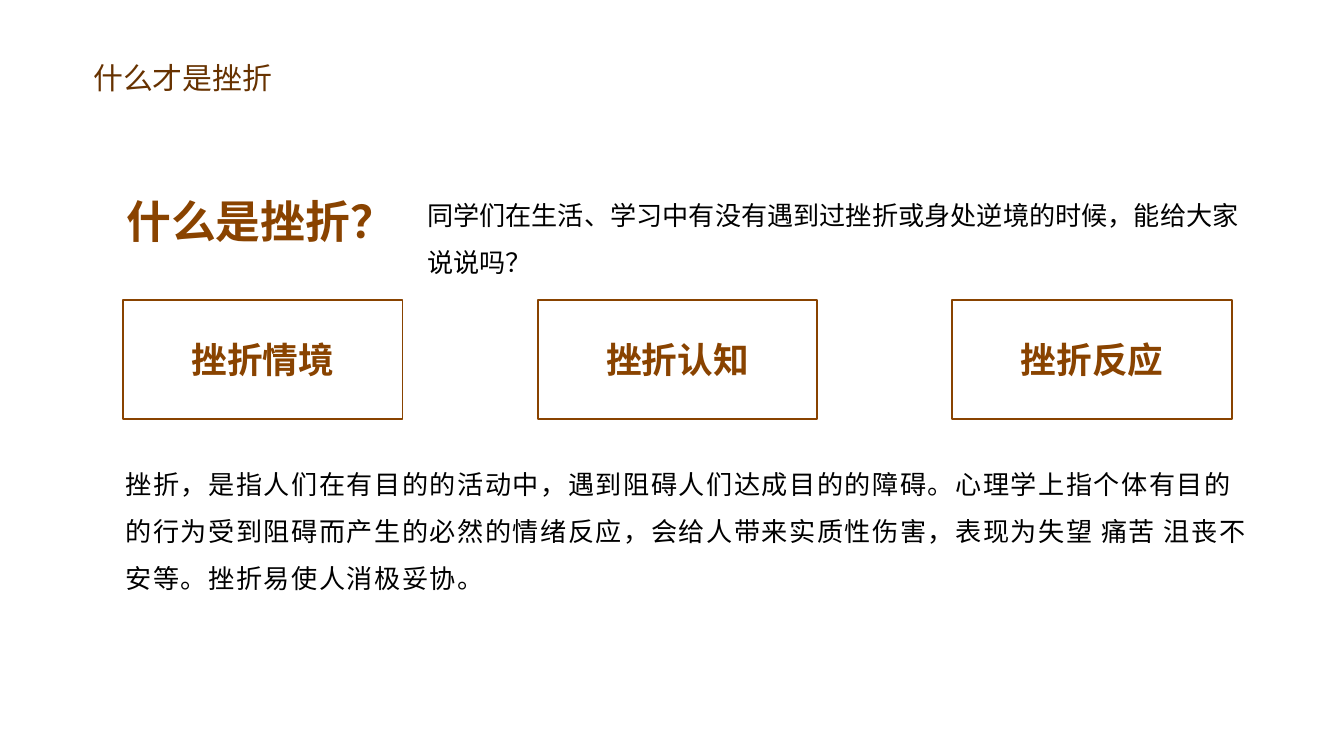
from dataclasses import dataclass

from pptx import Presentation
from pptx.dml.color import RGBColor
from pptx.enum.shapes import MSO_SHAPE as Kind
from pptx.enum.text import MSO_ANCHOR as Anchor, MSO_AUTO_SIZE as Fit, PP_ALIGN as Align
from pptx.oxml.ns import qn
from pptx.oxml.xmlchemy import OxmlElement
from pptx.util import Pt

PX = 4572  # 200 px to the inch
FONT = "Noto Sans CJK SC"
DARK = RGBColor(0x67, 0x32, 0x00)
BROWN = RGBColor(0x89, 0x43, 0x00)
BLACK = RGBColor(0x00, 0x00, 0x00)


@dataclass(frozen=True)
class Box:
    left: int
    top: int
    width: int
    height: int

    def emu(self) -> tuple[int, ...]:
        return tuple(n * PX for n in (self.left, self.top, self.width, self.height))


def write(shape, text: str, *, size: float, color: RGBColor, bold: bool = False,
          align=Align.LEFT, anchor=Anchor.TOP, wrap: bool = True,
          fit=Fit.SHAPE_TO_FIT_TEXT, lead: float = 1.0, gap: int = 0) -> None:
    """Fill a shape with one paragraph; gap is letter spacing in 1/100 pt."""
    frame = shape.text_frame
    frame.word_wrap, frame.auto_size = wrap, fit
    frame.vertical_anchor = anchor
    para = frame.paragraphs[0]
    para.alignment, para.line_spacing = align, lead
    run = para.add_run()
    run.text = text
    font = run.font
    font.name, font.size, font.bold = FONT, Pt(size), bold
    font.color.rgb = color
    props = font._element
    east = OxmlElement("a:ea")
    east.set("typeface", FONT)
    props.find(qn("a:latin")).addnext(east)
    if gap:
        props.set("spc", str(gap))


def label(slide, box: Box, text: str, **style) -> None:
    write(slide.shapes.add_textbox(*box.emu()), text, **style)


def card(slide, box: Box, text: str) -> None:
    shape = slide.shapes.add_shape(Kind.RECTANGLE, *box.emu())
    shape.shadow.inherit = False
    shape.fill.background()
    shape.line.color.rgb = BROWN
    shape.line.width = Pt(1)
    write(shape, text, size=19.1, color=BROWN, bold=True, align=Align.CENTER,
          anchor=Anchor.MIDDLE, fit=Fit.NONE)


def main() -> None:
    deck = Presentation()
    deck.slide_width, deck.slide_height = 2000 * PX, 1125 * PX
    slide = deck.slides.add_slide(deck.slide_layouts[5])

    # Title
    title = slide.shapes.title
    title.left, title.top, title.width, title.height = Box(119, 79, 310, 74).emu()
    write(title, "什么才是挫折", size=16, color=DARK, wrap=False)

    # Question and prompt
    body = dict(size=14, color=BLACK, anchor=Anchor.MIDDLE, lead=1.5)
    label(slide, Box(616, 262, 1266, 162),
          "同学们在生活、学习中有没有遇到过挫折或身处逆境的时候，能给大家说说吗？", **body)
    label(slide, Box(166, 279, 444, 100), "什么是挫折？", size=24, color=BROWN,
          bold=True, align=Align.CENTER, wrap=False)

    # Definition
    label(slide, Box(167, 663, 1716, 232),
          "挫折，是指人们在有目的的活动中，遇到阻碍人们达成目的的障碍。"
          "心理学上指个体有目的的行为受到阻碍而产生的必然的情绪反应，"
          "会给人带来实质性伤害，表现为失望 痛苦 沮丧不安等。挫折易使人消极妥协。",
          gap=80, **body)

    # Three aspects, evenly spaced
    for i, name in enumerate(("挫折情境", "挫折认知", "挫折反应")):
        card(slide, Box(183 + 617 * i, 446, 416, 178), name)

    deck.save("out.pptx")


if __name__ == "__main__":
    main()
